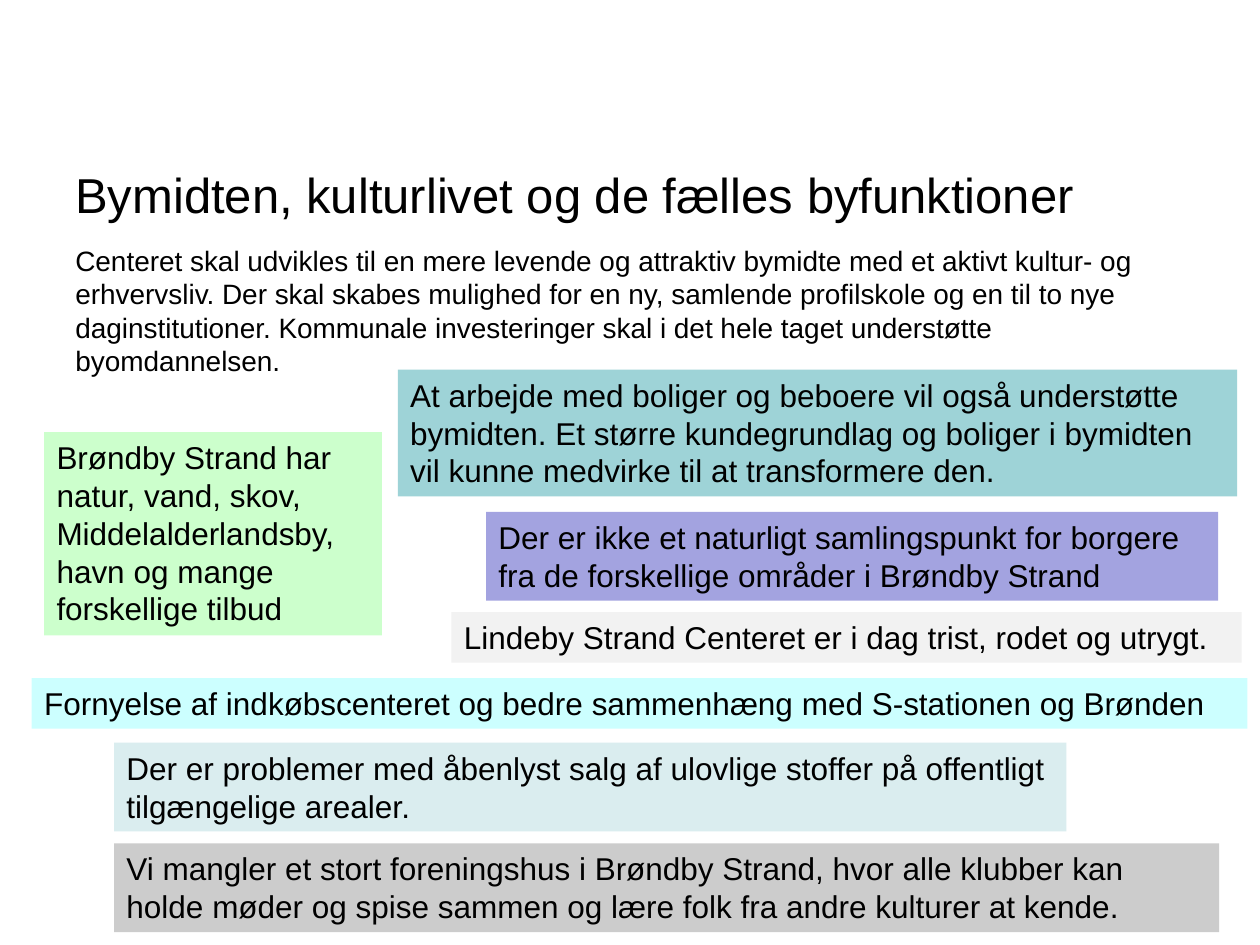
"""Build the slide on the town centre, cultural life and shared city functions."""
from pptx import Presentation
from pptx.dml.color import RGBColor
from pptx.enum.shapes import MSO_SHAPE
from pptx.enum.text import MSO_ANCHOR, PP_ALIGN
from pptx.util import Cm, Pt

TITLE = "Bymidten, kulturlivet og de fælles byfunktioner"
BODY = (
    "Centeret skal udvikles til en mere levende og attraktiv bymidte med et aktivt "
    "kultur- og erhvervsliv. Der skal skabes mulighed for en ny, samlende profilskole "
    "og en til to nye daginstitutioner. Kommunale investeringer skal i det hele taget "
    "understøtte byomdannelsen."
)
# left, top, width, lines, fill, text
STATEMENTS = [
    (0.89, 8.71, 6.81, 5, "CCFFCC",
     "Brøndby Strand har natur, vand, skov, Middelalderlandsby, havn og mange "
     "forskellige tilbud"),
    (9.8, 10.32, 14.76, 2, "A3A3E0",
     "Der er ikke et naturligt samlingspunkt for borgere fra de forskellige områder "
     "i Brøndby Strand"),
    (0.64, 13.67, 24.51, 1, "CCFFFF",
     "Fornyelse af indkøbscenteret og bedre sammenhæng med S-stationen og Brønden"),
    (9.1, 12.34, 15.93, 1, "F2F2F2",
     "Lindeby Strand Centeret er i dag trist, rodet og utrygt."),
    (2.3, 14.97, 19.2, 2, "DAEDEF",
     "Der er problemer med åbenlyst salg af ulovlige stoffer på offentligt "
     "tilgængelige arealer."),
    (2.3, 17, 22.28, 2, "CCCCCC",
     "Vi mangler et stort foreningshus i Brøndby Strand, hvor alle klubber kan holde "
     "møder og spise sammen og lære folk fra andre kulturer at kende."),
    (8.02, 7.45, 16.92, 3, "9ED3D7",
     "At arbejde med boliger og beboere vil også understøtte bymidten. Et større "
     "kundegrundlag og boliger i bymidten vil kunne medvirke til at transformere den."),
]
PADDING, LINE_HEIGHT = 0.25, 0.77


def color(value):
    return RGBColor.from_string(value)


def write(sp, text, size, anchor=MSO_ANCHOR.TOP):
    tf = sp.text_frame
    tf.word_wrap = True
    tf.vertical_anchor = anchor
    p = tf.paragraphs[0]
    p.text = text
    p.alignment = PP_ALIGN.LEFT
    p.font.name = "Arial"
    p.font.size = Pt(size)
    p.font.color.rgb = color("000000")


def add_statement(s, left, top, width, lines, fill, text):
    height = PADDING + lines * LINE_HEIGHT
    sp = s.shapes.add_shape(
        MSO_SHAPE.RECTANGLE, Cm(left), Cm(top), Cm(width), Cm(height))
    sp.shadow.inherit = False
    sp.fill.solid()
    sp.fill.fore_color.rgb = color(fill)
    sp.line.fill.background()
    write(sp, text, 18)


def main():
    prs = Presentation()
    prs.slide_width, prs.slide_height = Cm(25.4), Cm(19.05)
    s = prs.slides.add_slide(prs.slide_layouts[6])
    title = s.shapes.add_textbox(Cm(1.27), Cm(2.9), Cm(22.86), Cm(2))
    write(title, TITLE, 28, MSO_ANCHOR.MIDDLE)
    body = s.shapes.add_textbox(Cm(1.27), Cm(4.78), Cm(22.86), Cm(4.19))
    write(body, BODY, 16)
    for statement in STATEMENTS:
        add_statement(s, *statement)
    prs.save("out.pptx")


if __name__ == "__main__":
    main()
